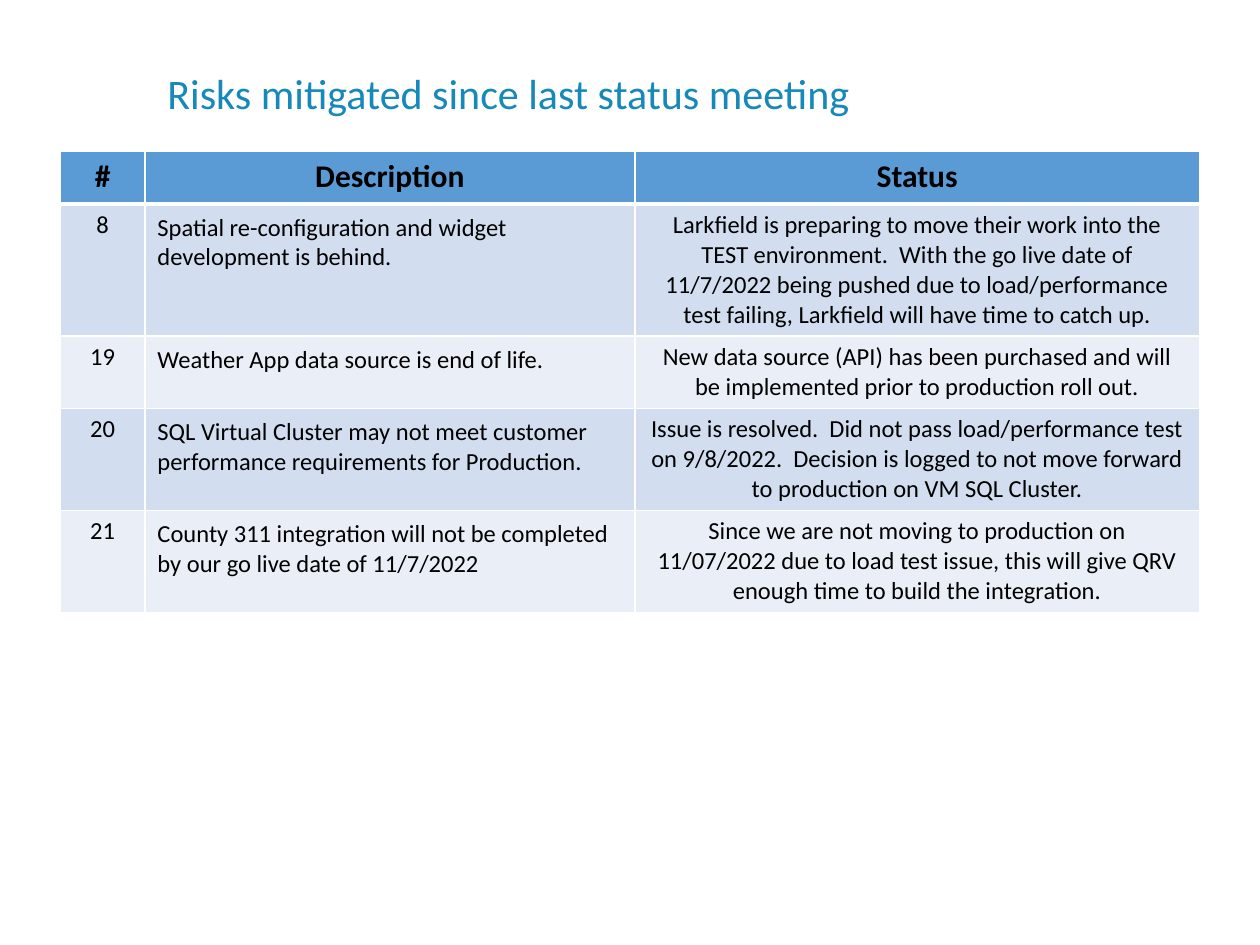
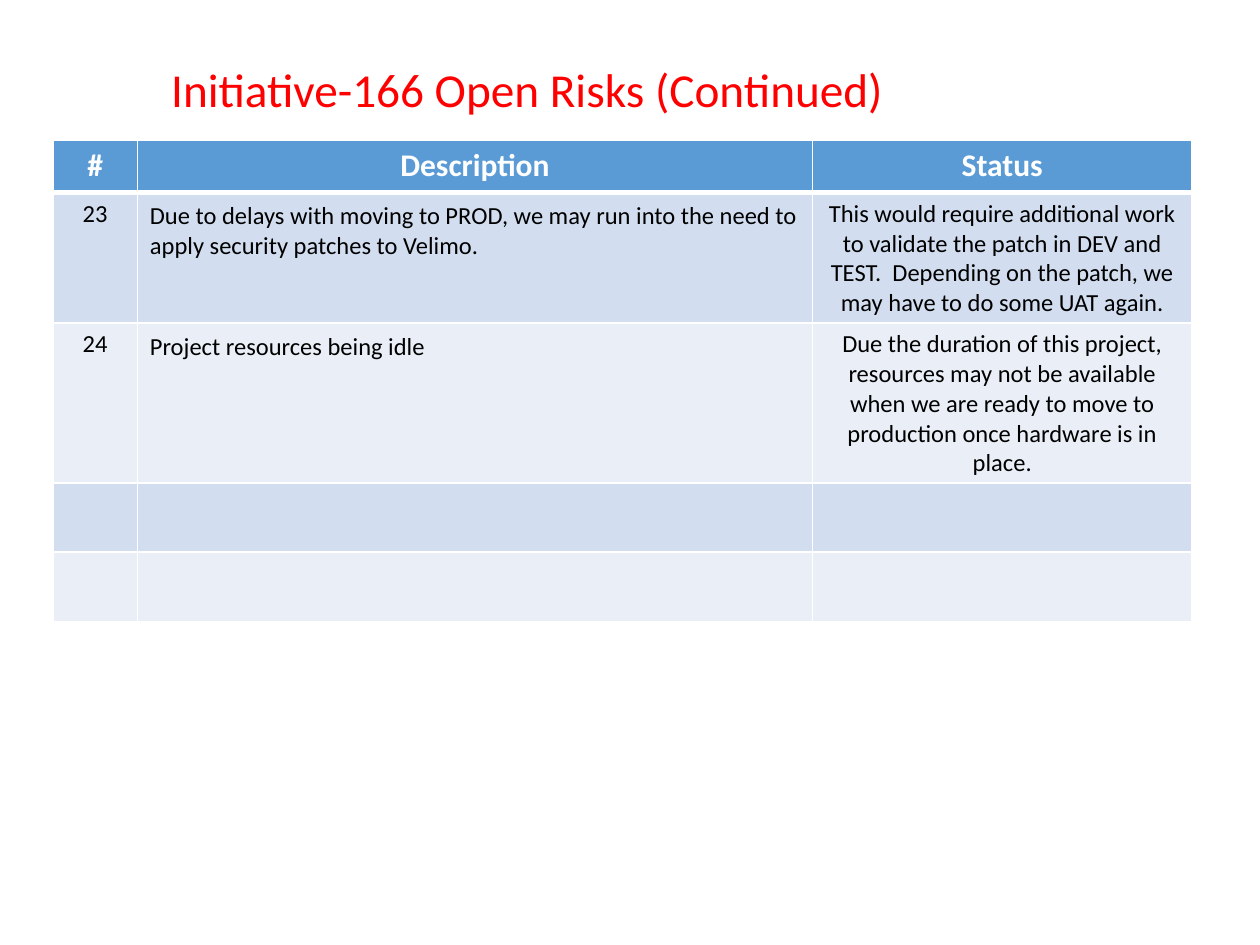
"""Build two risk status slides, each with a title and a table."""
from dataclasses import dataclass

from lxml.etree import SubElement as Sub
from pptx import Presentation
from pptx.dml.color import RGBColor as Rgb
from pptx.enum.text import PP_ALIGN as Align
from pptx.oxml.ns import qn
from pptx.util import Inches, Pt


@dataclass(frozen=True)
class Theme:
    font: str = "Calibri"
    black: str = "000000"
    white: str = "FFFFFF"
    blue: str = "1688B9"
    red: str = "FF0000"
    head: str = "5B9BD5"
    bands: tuple = ("D2DEEF", "EAEFF7")
    head_size: int = 18
    body_size: int = 14
    thin: int = 1
    thick: int = 3


THEME = Theme()
HEADS = ("#", "Description", "Status")
CLOSED = (
    ("8", "Spatial re-configuration and widget development is behind.",
     "Larkfield is preparing to move their work into the TEST environment.  "
     "With the go live date of 11/7/2022 being pushed due to load/performance "
     "test failing, Larkfield will have time to catch up."),
    ("19", "Weather App data source is end of life.",
     "New data source (API) has been purchased and will be implemented "
     "prior to production roll out."),
    ("20", "SQL Virtual Cluster may not meet customer performance "
     "requirements for Production.",
     "Issue is resolved.  Did not pass load/performance test on 9/8/2022.  "
     "Decision is logged to not move forward to production on VM SQL Cluster."),
    ("21", "County 311 integration will not be completed by our go live date "
     "of 11/7/2022",
     "Since we are not moving to production on 11/07/2022 due to load test "
     "issue, this will give QRV enough time to build the integration."),
)
OPEN = (
    ("23", "Due to delays with moving to PROD, we may run into the need to "
     "apply security patches to Velimo.",
     "This would require additional work to validate the patch in DEV and "
     "TEST.  Depending on the patch, we may have to do some UAT again."),
    ("24", "Project resources being idle",
     "Due the duration of this project, resources may not be available when "
     "we are ready to move to production once hardware is in place."),
    ("", "", ""),
    ("", "", ""),
)


def add_run(para, text, size, color, bold=False):
    run = para.add_run()
    run.text = text
    font = run.font
    font.name, font.size, font.bold = THEME.font, Pt(size), bold
    font.color.rgb = Rgb.from_string(color)


def add_title(slide, text, box, size, color, space=None):
    frame = slide.shapes.add_textbox(*map(Inches, box)).text_frame
    frame.word_wrap = True
    para = frame.paragraphs[0]
    para.line_spacing = space
    add_run(para, text, size, color)


def add_edge(cell, side, width):
    line = Sub(cell._tc.get_or_add_tcPr(), qn(f"a:ln{side}"), w=str(Pt(width)))
    fill = Sub(line, qn("a:solidFill"))
    Sub(fill, qn("a:srgbClr"), val=THEME.white)


def style_cell(cell, row, color):
    heavy = {0: "B", 1: "T"}.get(row)
    for side in "LRTB":
        add_edge(cell, side, THEME.thick if side == heavy else THEME.thin)
    cell.fill.solid()
    cell.fill.fore_color.rgb = Rgb.from_string(color)


def fill_cell(cell, text, row, col, ink):
    style_cell(cell, row, THEME.bands[(row - 1) % 2] if row else THEME.head)
    if not text:
        return
    para = cell.text_frame.paragraphs[0]
    if row and col == 1:
        cell.margin_top = cell.margin_bottom = Inches(0.07)
    else:
        para.alignment = Align.CENTER
    if row:
        add_run(para, text, THEME.body_size, THEME.black)
    else:
        add_run(para, text, THEME.head_size, ink, True)


def add_grid(slide, left, top, widths, risks, ink):
    rows = (HEADS, *risks)
    highs = [0.42] + [0.55] * len(risks)
    box = (left, top, sum(widths), sum(highs))
    grid = slide.shapes.add_table(len(rows), len(HEADS), *map(Inches, box)).table
    for col, width in zip(grid.columns, widths):
        col.width = Inches(width)
    for row, (texts, high) in enumerate(zip(rows, highs)):
        grid.rows[row].height = Inches(high)
        for col, text in enumerate(texts):
            fill_cell(grid.cell(row, col), text, row, col, ink)


def main():
    deck = Presentation()
    deck.slide_width, deck.slide_height = Inches(10), Inches(7.5)
    blank = deck.slide_layouts[6]

    slide = deck.slides.add_slide(blank)
    add_grid(slide, 0.48, 1.2, (0.67, 3.89, 4.48), CLOSED, THEME.black)
    add_title(slide, "Risks mitigated since last status meeting",
              (1.23, 0.49, 5.92, 0.5), 24, THEME.blue)

    slide = deck.slides.add_slide(blank)
    add_grid(slide, 0.42, 1.11, (0.67, 5.36, 3.01), OPEN, THEME.white)
    add_title(slide, "Initiative-166 Open Risks (Continued)",
              (1.26, 0.55, 6.39, 0.53), 27, THEME.red, 0.7)

    deck.save("out.pptx")


if __name__ == "__main__":
    main()
